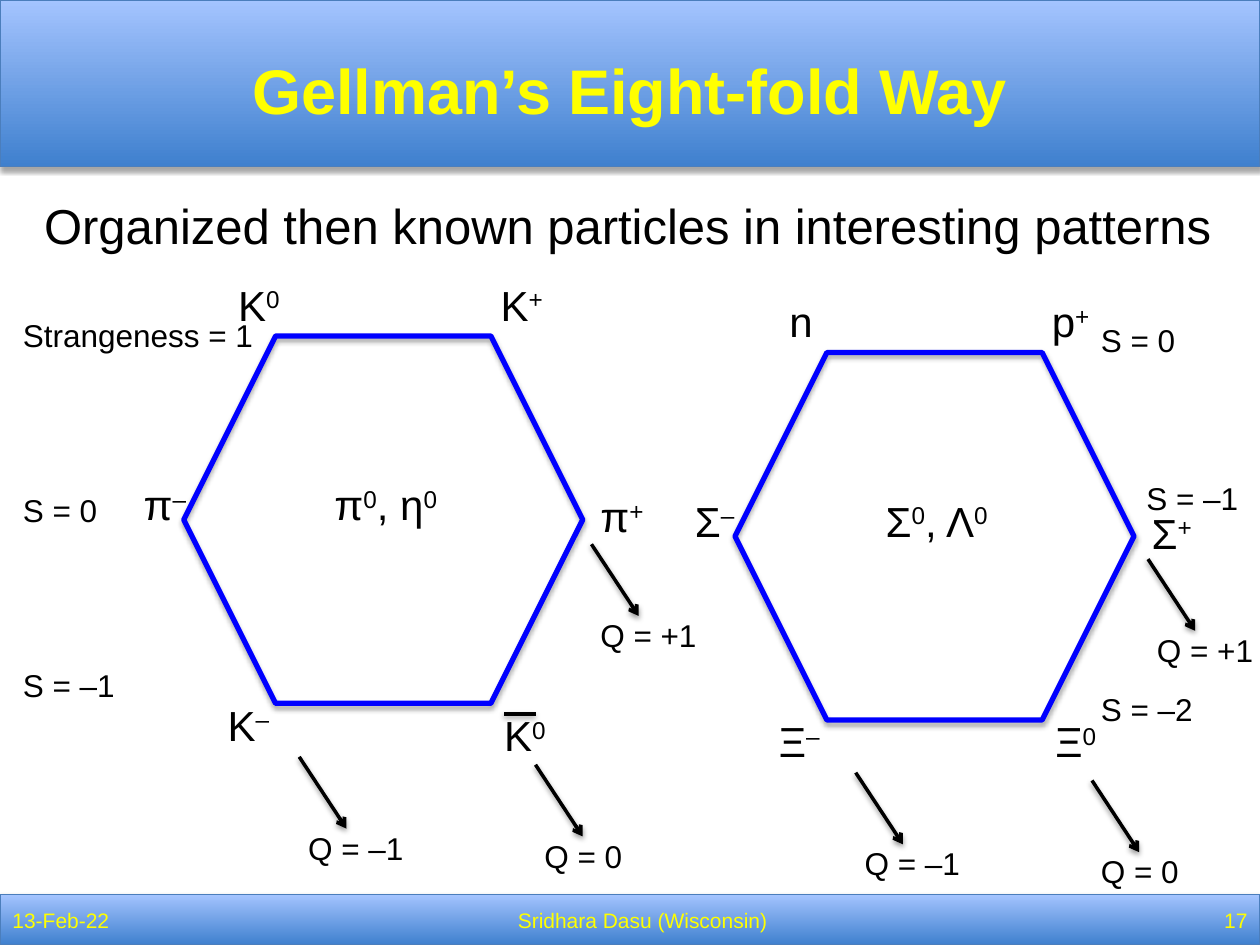
from lxml.etree import SubElement
from pptx import Presentation
from pptx.dml.color import RGBColor
from pptx.enum.shapes import MSO_CONNECTOR, MSO_SHAPE
from pptx.enum.text import MSO_ANCHOR, MSO_AUTO_SIZE, PP_ALIGN
from pptx.oxml.ns import qn
from pptx.util import Pt

THEME = {
    "font": "Arial",
    "yellow": "FFFF00", "black": "000000", "outline": "0000FF",
    "band_dark": "3F80CE", "band_light": "A4C4FF", "band_line": "4B7EBC",
    "title": 36, "body": 28, "particle": 24, "note": 18, "footer": 12,
}
WIDTH, HEIGHT = 720, 540

TITLE = "Gellman’s Eight-fold Way"
BODY = "Organized then known particles in interesting patterns"
BANDS = [(0, 95), (511.2, 28.8)]
FOOTER = [
    ("13-Feb-22", 0, 98.5, PP_ALIGN.LEFT),
    ("Sridhara Dasu (Wisconsin)", 98.5, 537.5, PP_ALIGN.CENTER),
    ("17", 636, 84, PP_ALIGN.RIGHT),
]

HEXAGON_SIZE = (228, 210)
SLOTS = {
    "left": (-30, 78, 42), "right": (231, 85, 42), "center": (79, 78, 78),
    "top left": (24, -36, 42), "top right": (174, -36, 42),
    "bottom left": (18, 204, 42), "bottom right": (176, 204, 42),
}
BAR_DROP = 6
OCTETS = [
    {"corner": (105, 192), "barred": ["bottom right"], "particles": {
        "left": "π^–", "right": "π^+", "center": "π^0^, η^0",
        "top left": "K^0", "top right": "K^+",
        "bottom left": "K^–", "bottom right": "K^0"}},
    {"corner": (420, 201.5), "barred": [], "particles": {
        "left": "Σ^–", "right": "Σ^+", "center": "Σ^0^, Λ^0",
        "top left": "n", "top right": "p^+",
        "bottom left": "Ξ^–", "bottom right": "Ξ^0"}},
]
STRANGENESS = [
    ("Strangeness = 1", 6, 177, 150), ("S = 0", 6, 277, 150), ("S = –1", 6, 377, 150),
    ("S = 0", 622, 180, 75), ("S = –1", 648, 270, 75), ("S = –2", 622, 391, 75),
]
CHARGES = [
    ("Q = –1", 171, 432.5), ("Q = 0", 306, 437), ("Q = +1", 338, 311),
    ("Q = –1", 489, 441.5), ("Q = 0", 624, 446), ("Q = +1", 656, 319.5),
]


def color(name):
    return RGBColor.from_string(THEME[name])


def write(frame, text, size="note", ink="black", bold=False,
          align=PP_ALIGN.LEFT, anchor=MSO_ANCHOR.TOP):
    frame.word_wrap = True
    frame.auto_size = MSO_AUTO_SIZE.NONE
    frame.vertical_anchor = anchor
    para = frame.paragraphs[0]
    para.alignment = align
    para.space_before = Pt(0)
    for index, piece in enumerate(text.split("^")):
        span = para.add_run()
        span.text = piece
        span.font.name = THEME["font"]
        span.font.size = Pt(THEME[size])
        span.font.bold = bold
        span.font.color.rgb = color(ink)
        if index % 2:
            span.font._element.set("baseline", "30000")
    return para


def add_label(page, text, left, top, width, height=30, **style):
    box = page.shapes.add_textbox(Pt(left), Pt(top), Pt(width), Pt(height))
    write(box.text_frame, text, **style)


def add_shadow(shape, opacity=35, distance=1.8):
    effects = SubElement(shape._element.spPr, qn("a:effectLst"))
    shadow = SubElement(effects, qn("a:outerShdw"), blurRad=str(Pt(3.1)),
                        dist=str(Pt(distance)), dir="5400000", rotWithShape="0")
    tint = SubElement(shadow, qn("a:srgbClr"), val=THEME["black"])
    SubElement(tint, qn("a:alpha"), val=str(opacity * 1000))


def add_line(page, left, top, right, bottom, arrow=False):
    line = page.shapes.add_connector(
        MSO_CONNECTOR.STRAIGHT, Pt(left), Pt(top), Pt(right), Pt(bottom))
    line.line.color.rgb = color("black")
    line.line.width = Pt(2)
    if arrow:
        SubElement(line.line._get_or_add_ln(), qn("a:tailEnd"), type="arrow")
    add_shadow(line, opacity=38, distance=1.6)


def add_band(page, top, height):
    band = page.shapes.add_shape(MSO_SHAPE.RECTANGLE, 0, Pt(top), Pt(WIDTH), Pt(height))
    band.fill.gradient()
    band.fill.gradient_angle = 90
    for stop, position, name in zip(band.fill.gradient_stops, (0, 1),
                                    ("band_dark", "band_light")):
        stop.position = position
        stop.color.rgb = color(name)
    band.line.color.rgb = color("band_line")
    band.line.width = Pt(0.75)
    add_shadow(band)
    page.shapes._spTree.insert(2, band._element)


def add_octet(page, corner, barred, particles):
    left, top = corner
    hexagon = page.shapes.add_shape(
        MSO_SHAPE.HEXAGON, Pt(left), Pt(top), *map(Pt, HEXAGON_SIZE))
    hexagon.fill.background()
    hexagon.line.color.rgb = color("outline")
    hexagon.line.width = Pt(3)
    add_shadow(hexagon)
    for slot, text in particles.items():
        across, down, width = SLOTS[slot]
        x, y = left + across, top + down
        if slot in barred:
            y += BAR_DROP
            add_line(page, x + 7, y + 6, x + 25, y + 6)
        add_label(page, text, x, y, width, height=36, size="particle")


def place(shape, left, top, width, height):
    shape.left, shape.top, shape.width, shape.height = map(Pt, (left, top, width, height))


def main():
    deck = Presentation()
    deck.slide_width, deck.slide_height = Pt(WIDTH), Pt(HEIGHT)
    page = deck.slides.add_slide(deck.slide_layouts[1])

    for band in BANDS:
        add_band(page, *band)

    title, body = page.placeholders
    place(title, 36, 6, 648, 90)
    write(title.text_frame, TITLE, size="title", ink="yellow", bold=True,
          align=PP_ALIGN.CENTER, anchor=MSO_ANCHOR.MIDDLE)
    place(body, 18, 108, 684, 403)
    para = write(body.text_frame, BODY, size="body")
    properties = para._p.get_or_add_pPr()
    properties.set("marL", str(Pt(27)))
    properties.set("indent", str(Pt(-27)))
    SubElement(properties, qn("a:buNone"))

    for text, left, width, align in FOOTER:
        add_label(page, text, left, 511.2, width, height=28.8, size="footer",
                  ink="yellow", align=align, anchor=MSO_ANCHOR.MIDDLE)
    for octet in OCTETS:
        add_octet(page, **octet)
    for text, left, top, width in STRANGENESS:
        add_label(page, text, left, top, width)
    for text, left, top in CHARGES:
        add_line(page, left, top, left + 27, top + 41, arrow=True)
        add_label(page, text, left - 2, top + 37.5, 86)

    deck.save("out.pptx")


if __name__ == "__main__":
    main()
